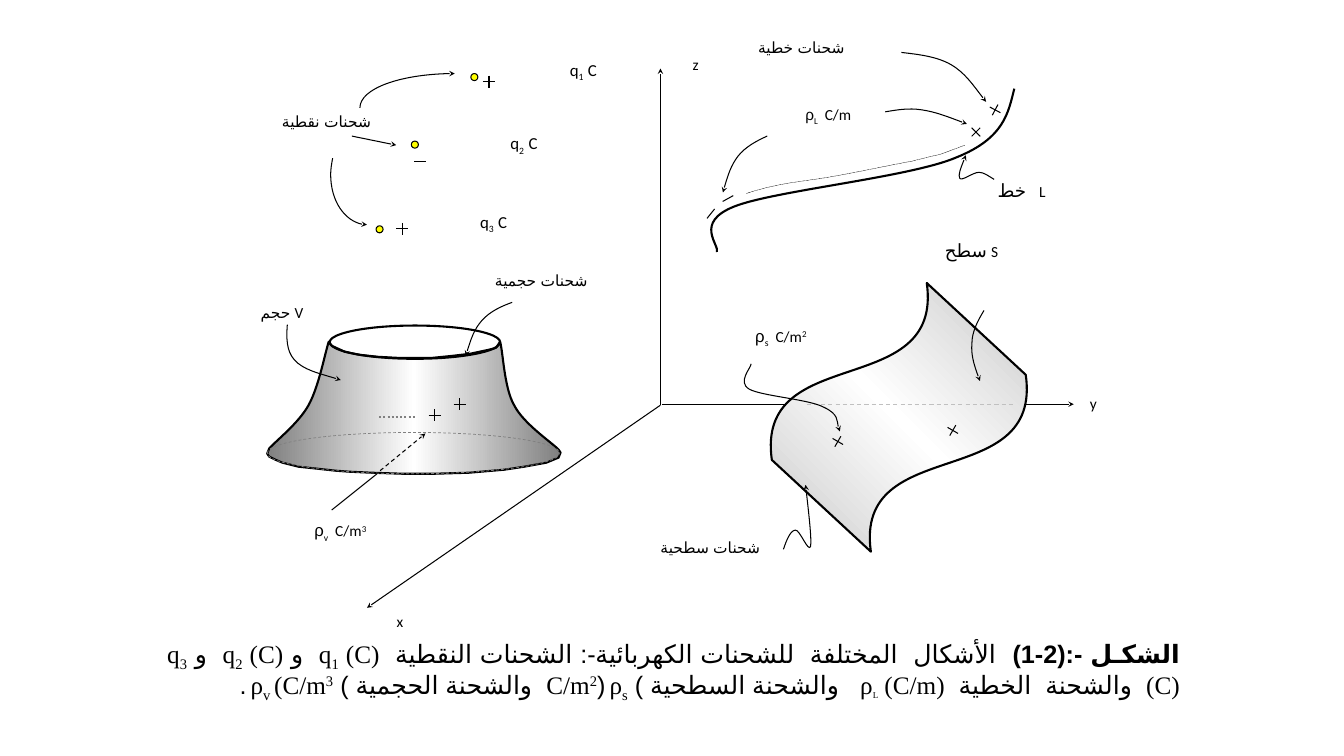
from copy import deepcopy
from dataclasses import dataclass
from math import cos, radians, sin

from lxml.etree import SubElement
from pptx import Presentation
from pptx.dml.color import RGBColor as RGB
from pptx.enum.dml import MSO_LINE as Dash
from pptx.enum.shapes import MSO_CONNECTOR as Conn, MSO_SHAPE as Preset
from pptx.enum.text import MSO_AUTO_SIZE as AutoSize, PP_ALIGN as Align
from pptx.oxml.ns import qn
from pptx.util import Inches, Pt


@dataclass(frozen=True)
class Theme:
    ink: RGB = RGB(0, 0, 0)
    white: RGB = RGB(255, 255, 255)
    charge: RGB = RGB(255, 255, 0)
    hidden: RGB = RGB(0xC0, 0xC0, 0xC0)
    dotted: RGB = RGB(0x80, 0x80, 0x80)
    body: RGB = RGB(0x80, 0x80, 0x80)
    thin: float = 0.75
    bold: float = 1.5
    small: int = 11
    medium: int = 12
    large: int = 13
    caption: int = 18
    latin: str = "Calibri"
    greek: str = "Arial"
    arabic: str = "Times New Roman"
    script: str = "Arial"
    language: str = "ar-SA"


T = Theme()
SUB, SUP = -25, 30

# Outlines: a start point, then segments (2 numbers: line, 6 numbers: curve)
LINE_CHARGE = [(7.11, 2.5), (7.14, 2.43, 6.88, 2.21, 7.28, 2.05),
               (7.68, 1.89, 9.03, 1.76, 9.49, 1.56), (9.96, 1.37, 10, 1.12, 10.06, 0.88)]
LINE_DOTS = [(7.4, 1.92), (7.46, 1.9, 7.59, 1.86, 7.75, 1.83), (7.9, 1.8, 8.11, 1.78, 8.32, 1.74),
             (8.54, 1.7, 8.87, 1.63, 9.04, 1.6), (9.2, 1.56, 9.24, 1.55, 9.33, 1.53),
             (9.41, 1.5, 9.52, 1.46, 9.57, 1.44)]
VOLUME = [(3.26, 3.39), (3.29, 3.43), (3.42, 3.49), (3.57, 3.52), (3.75, 3.54), (3.94, 3.55),
          (4.11, 3.55), (4.29, 3.55), (4.49, 3.53), (4.66, 3.51), (4.8, 3.48),
          (4.85, 3.47, 4.89, 3.46, 4.92, 3.45), (4.96, 3.39),
          (4.99, 3.49, 5, 3.85, 5.1, 4.02), (5.19, 4.2, 5.46, 4.38, 5.54, 4.46),
          (5.56, 4.49), (5.54, 4.54), (5.42, 4.59), (5.2, 4.63), (5, 4.66), (4.65, 4.69),
          (4.3, 4.7), (4, 4.7), (3.69, 4.69), (3.47, 4.68), (3.33, 4.67), (3.15, 4.65),
          (2.96, 4.63), (2.8, 4.59), (2.73, 4.56), (2.67, 4.53), (2.65, 4.5), (2.67, 4.45),
          (2.74, 4.37, 2.96, 4.2, 3.06, 4.02), (3.16, 3.84, 3.22, 3.52, 3.26, 3.39)]

# Curved pointers, each ending at its tip
POINTERS = [
    [(7.61, 1.35), (7.5, 1.4, 7.39, 1.46, 7.32, 1.55), (7.25, 1.64, 7.21, 1.77, 7.17, 1.91)],
    [(8.78, 1.11), (8.9, 1.09, 9.01, 1.07, 9.14, 1.09), (9.28, 1.11, 9.43, 1.17, 9.59, 1.23)],
    [(9.86, 1.78), (9.81, 1.75, 9.76, 1.71, 9.71, 1.71), (9.65, 1.71, 9.54, 1.8, 9.52, 1.77),
     (9.5, 1.74, 9.54, 1.64, 9.58, 1.54)],
    [(8.94, 0.52), (9.11, 0.54, 9.29, 0.56, 9.43, 0.64), (9.57, 0.72, 9.67, 0.87, 9.78, 1.01)],
    [(7.45, 3.61), (7.45, 3.65, 7.31, 3.79, 7.43, 3.86), (7.55, 3.93, 8.02, 3.96, 8.17, 4.04),
     (8.32, 4.11, 8.3, 4.23, 8.33, 4.28)],
    [(2.85, 3.22), (2.84, 3.35, 2.84, 3.48, 2.92, 3.57), (3.01, 3.67, 3.19, 3.71, 3.38, 3.77)],
    [(3.3, 1.57), (3.29, 1.62, 3.28, 1.68, 3.28, 1.73), (3.28, 2, 3.45, 2.23, 3.64, 2.23)],
    [(3.57, 1.07), (3.57, 0.88, 3.99, 0.73, 4.51, 0.73)],
    [(7.77, 5.45), (7.8, 5.36, 7.84, 5.26, 7.89, 5.26), (7.93, 5.25, 8.02, 5.49, 8.04, 5.42),
     (8.05, 5.34, 8.02, 5.08, 7.99, 4.81)],
    [(9.76, 3.08), (9.7, 3.18, 9.64, 3.29, 9.64, 3.41), (9.63, 3.52, 9.67, 3.65, 9.72, 3.78)],
    [(5.08, 3), (4.97, 3.04, 4.86, 3.09, 4.78, 3.18), (4.7, 3.27, 4.66, 3.4, 4.62, 3.53)],
]

# Straight lines: from, to, format
AXES = [((6.55, 4.02), (6.55, 0.68)), ((6.55, 4.02), (3.64, 6.03)), ((6.57, 4.01), (10.65, 4.01))]
DETAILS = [
    ((3.76, 4.14), (4.12, 4.14), dict(color=T.dotted, width=T.bold, dash=Dash.ROUND_DOT)),
    ((8, 4.01), (10.06, 4.01), dict(color=T.hidden, dash=Dash.DASH)),
    ((3.29, 5.06), (3.74, 4.7), {}),
    ((3.77, 4.67), (4.22, 4.3), dict(dash=Dash.DASH, arrow=True)),
    ((3.49, 1.35), (3.93, 1.44), dict(arrow=True)),
]
POINT_CHARGES = [(4.67, 0.73), (4.08, 1.4), (3.73, 2.24)]

# Signs: centre x, centre y, tilt in degrees
MARK_RADIUS = 0.06
PLUSES = [(9.87, 1.09, 28), (9.68, 1.31, 45), (9.45, 4.27, 30), (8.31, 4.38, 30),
          (4.56, 4.01, 0), (4.31, 4.12, 0), (4.85, 0.81, 0), (3.99, 2.27, 0)]
MINUSES = [(7.22, 1.97, -29), (7.05, 2.12, -51), (4.17, 1.6, 0)]


# Labels: box, alignment, runs of (text, font, size, baseline)
def density(kind, size, power=""):
    runs = [("ρ", T.greek, size, 0), (kind, T.latin, size, SUB), ("  C/m", T.latin, T.small, 0)]
    return runs + ([(power, T.latin, T.small, SUP)] if power else [])


def point_charge(index):
    return [("q", T.latin, T.medium, 0), (f"{index}  ", T.latin, T.medium, SUB),
            ("C", T.latin, T.medium, 0)]


def word(text, font=T.arabic, size=T.small):
    return [(text, font, size, 0)]


LABELS = [
    ((2.22, 1.11, 1.46, 0.43), Align.RIGHT, word("شحنات نقطية")),
    ((6.68, 0.55, 0.25, 0.4), Align.RIGHT, word("z", T.latin)),
    ((10.72, 3.91, 0.25, 0.4), Align.CENTER, word("y", T.latin)),
    ((3.75, 6.07, 0.25, 0.4), Align.RIGHT, word("x", T.latin)),
    ((7.59, 1.04, 1.25, 0.44), Align.CENTER, density("L", T.small)),
    ((7.12, 3.23, 1.25, 0.44), Align.CENTER, density("s", T.medium, "2")),
    ((2.75, 5.16, 1.25, 0.44), Align.CENTER, density("v", T.medium, "3")),
    ((5.03, 0.59, 0.89, 0.5), Align.RIGHT, point_charge(1)),
    ((4.44, 1.32, 0.89, 0.5), Align.RIGHT, point_charge(2)),
    ((4.21, 2.1, 0.82, 0.5), Align.RIGHT, point_charge(3)),
    ((9.14, 2.37, 0.76, 0.43), Align.RIGHT,
     word("سطح", size=T.large) + word(" ", T.greek) + word("S", T.latin)),
    ((9.61, 1.78, 0.76, 0.43), Align.RIGHT,
     word("خط", size=T.large) + word("   ", T.greek) + word("L", T.latin)),
    ((6.07, 5.34, 1.95, 0.64), Align.CENTER, word("شحنات سطحية")),
    ((7.52, 0.38, 1.3, 0.43), Align.LEFT, word("شحنات خطية")),
    ((4.91, 2.69, 1.3, 0.43), Align.LEFT, word("شحنات حجمية")),
    ((2.25, 3.01, 0.76, 0.27), Align.RIGHT, word("حجم ") + word("V", T.latin)),
]
CAPTION_HEAD = "الشكـل -:(2-1)  "
CAPTION = [
    (CAPTION_HEAD, 0), ("الأشكال  المختلفة  للشحنات الكهربائية-: الشحنات النقطية  q", 0),
    ("1", SUB), (" (C)  و q", 0), ("2", SUB), (" (C)  و q", 0), ("3", SUB),
    (" (C)  والشحنة  الخطية  ρ", 0), ("L", SUB), (" (C/m)   والشحنة السطحية ) ρ", 0),
    ("s ", SUB), ("(C/m", 0), ("2", SUP), ("  والشحنة الحجمية ) ρ", 0), ("v ", SUB),
    ("(C/m", 0), ("3 ", SUP), (".", 0),
]

deck = Presentation()
deck.slide_width, deck.slide_height = Inches(13.33), Inches(7.5)
shapes = deck.slides.add_slide(deck.slide_layouts[6]).shapes


def set_line(line, color=T.ink, width=T.thin, dash=None, arrow=False):
    line.color.rgb, line.width = color, Pt(width)
    if dash:
        line.dash_style = dash
    if arrow:
        SubElement(line._get_or_add_ln(), qn("a:tailEnd"), type="stealth", w="sm", len="sm")


def add_line(start, end, **style):
    link = shapes.add_connector(Conn.STRAIGHT, *map(Inches, start + end))
    set_line(link.line, **style)
    SubElement(link._element.spPr, qn("a:effectLst"))


def finish(shape, fill=None, **style):
    shape.shadow.inherit = False
    if fill:
        shape.fill.solid()
        shape.fill.fore_color.rgb = fill
    else:
        shape.fill.background()
    set_line(shape.line, **style)
    return shape


def add_preset(preset, box, **style):
    return finish(shapes.add_shape(preset, *map(Inches, box)), **style)


def add_outline(outline, close=False, **style):
    start, *segments = outline
    groups = [[(Inches(s[i]), Inches(s[i + 1])) for i in range(0, len(s), 2)] for s in segments]
    builder = shapes.build_freeform(*map(Inches, start), scale=1.0)
    builder.add_line_segments([point for group in groups for point in group], close=close)
    shape = builder.convert_to_shape()
    path = shape._element.find(".//" + qn("a:path"))
    steps = iter(path.findall(qn("a:lnTo")))
    for group in groups:
        lines = [next(steps) for _ in group]
        if len(lines) == 3:  # three points make one cubic curve
            curve = SubElement(path, qn("a:cubicBezTo"))
            lines[0].addprevious(curve)
            for line in lines:
                curve.append(line[0])
                path.remove(line)
    return finish(shape, **style)


def shade(shape, edge, angle):
    fill = shape.fill
    fill.gradient()
    fill.gradient_angle = angle
    for stop in fill.gradient_stops:
        stop.color.rgb = edge
    gradient = shape._element.spPr.find(qn("a:gradFill"))
    gradient.set("rotWithShape", "0")
    stops = gradient.find(qn("a:gsLst"))
    middle = deepcopy(stops[0])
    middle.set("pos", "50000")
    stops.insert(1, middle)
    fill.gradient_stops[1].color.rgb = T.white


def add_text(box, runs, align, margin=0, bold_text=None):
    frame = shapes.add_textbox(*map(Inches, box)).text_frame
    frame.word_wrap = True
    if not margin:
        frame.margin_left = frame.margin_right = frame.margin_top = frame.margin_bottom = 0
    paragraph = frame.paragraphs[0]
    paragraph.alignment = align
    for text, font, size, baseline in runs:
        run = paragraph.add_run()
        run.text = text
        run.font.name, run.font.size, run.font.bold = font, Pt(size), text == bold_text
        run.font.color.rgb = T.ink
        props = run._r.get_or_add_rPr()
        SubElement(props, qn("a:cs"), typeface=T.script)
        if font == T.arabic:
            props.set("lang", T.language)
        if baseline:
            props.set("baseline", str(baseline * 1000))
    return frame


# Axes, line charge and surface
for start, end in AXES:
    add_line(start, end, arrow=True)
add_outline(LINE_CHARGE, width=T.bold)
surface = add_preset(Preset.WAVE, (7.73, 3.2, 2.37, 1.88), width=T.bold)
surface.rotation = 311.2
surface.adjustments[0], surface.adjustments[1] = 0.144, -0.008
shade(surface, T.hidden, 45)
add_outline(LINE_DOTS, width=0.25, dash=Dash.ROUND_DOT)

# Volume with its rims
shade(add_outline(VOLUME, close=True, width=T.bold), T.body, 0)
add_preset(Preset.OVAL, (3.27, 3.23, 1.69, 0.33), width=T.bold)
add_preset(Preset.OVAL, (2.65, 4.29, 2.9, 0.41), color=T.dotted, width=0.5, dash=Dash.DASH)

# Point charges and signs
for left, top in POINT_CHARGES:
    add_preset(Preset.OVAL, (left, top, 0.07, 0.07), fill=T.charge)
for signs, turns in ((PLUSES, (0, 90)), (MINUSES, (0,))):
    for x, y, tilt in signs:
        for turn in turns:
            dx, dy = (MARK_RADIUS * f(radians(tilt + turn)) for f in (cos, sin))
            add_line((x - dx, y - dy), (x + dx, y + dy))

# Pointers and labels
for start, end, style in DETAILS:
    add_line(start, end, **style)
for pointer in POINTERS:
    add_outline(pointer, arrow=True)
for box, align, runs in LABELS:
    add_text(box, runs, align)

# Caption
caption_runs = [(text, T.arabic, T.small if text == "L" else T.caption, base)
                for text, base in CAPTION]
caption = add_text((1.56, 6.32, 10.24, 0.72), caption_runs, Align.JUSTIFY, margin=1,
                   bold_text=CAPTION_HEAD)
caption.auto_size = AutoSize.SHAPE_TO_FIT_TEXT
caption.paragraphs[0].line_spacing = Pt(22)
caption.paragraphs[0]._p.get_or_add_pPr().set("rtl", "1")

deck.save("out.pptx")
